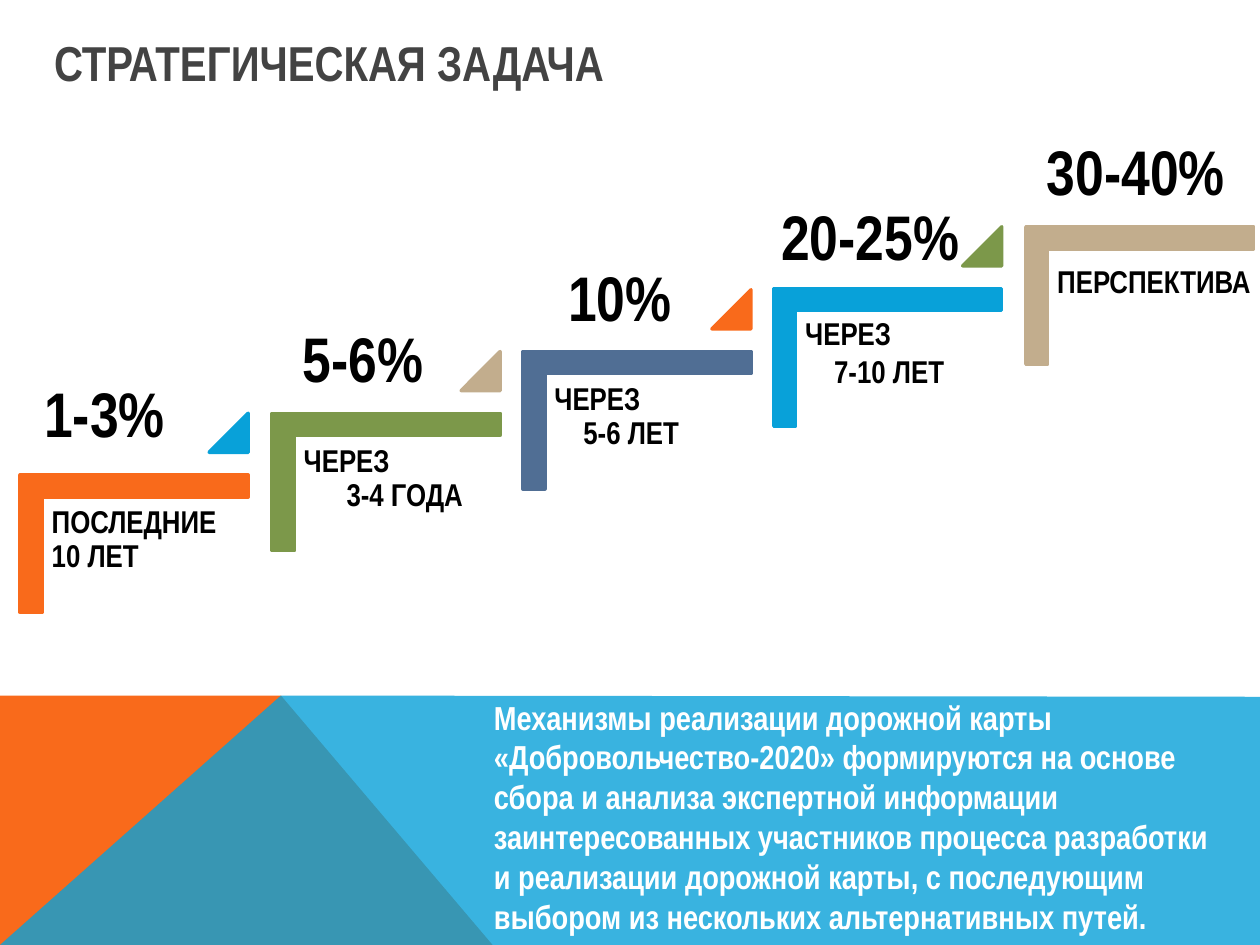
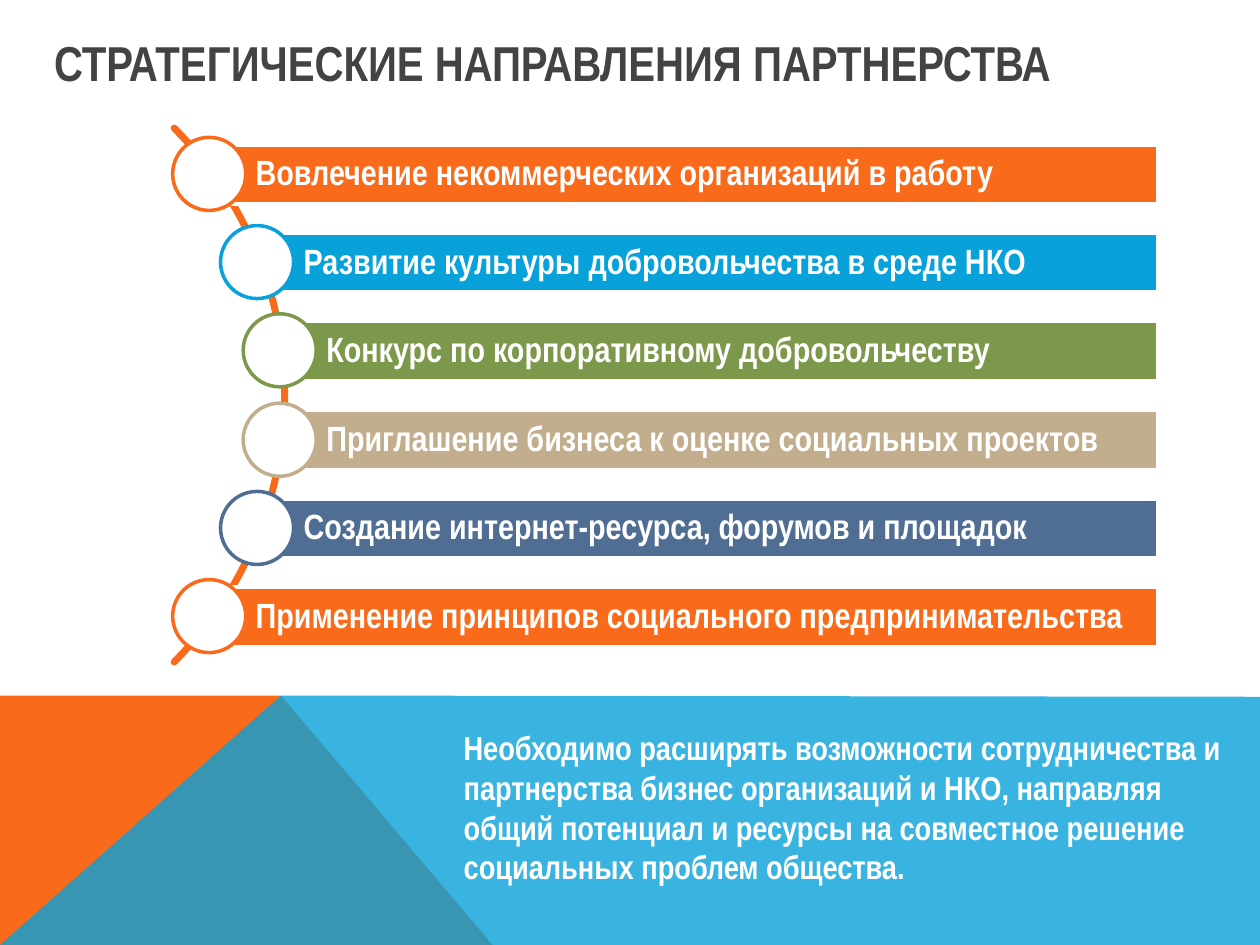
"""Build two slides on volunteering strategy: growth steps and partnership directions."""
from lxml.etree import SubElement
from pptx import Presentation
from pptx.dml.color import RGBColor
from pptx.enum.shapes import MSO_SHAPE
from pptx.enum.text import MSO_ANCHOR, MSO_AUTO_SIZE, PP_ALIGN
from pptx.oxml.ns import qn
from pptx.util import Pt

PX = 9144
FONT = "Arial Narrow"
ORANGE = RGBColor(0xF9, 0x6A, 0x1B)
BLUE = RGBColor(0x08, 0xA1, 0xD9)
GREEN = RGBColor(0x7C, 0x98, 0x4A)
SAND = RGBColor(0xC2, 0xAD, 0x8D)
SLATE = RGBColor(0x50, 0x6E, 0x94)
GRAY = RGBColor(0x43, 0x43, 0x43)
BLACK = RGBColor(0, 0, 0)
WHITE = RGBColor(0xFF, 0xFF, 0xFF)

TITLE_BOX = (33, 21, 924, 57)
BANDS = [
    (ORANGE, 100, [(0, 750), (0, 552), (223, 552), (391, 750)]),
    (BLUE, 80, [(0, 750), (223, 552), (1000, 553), (1000, 750)]),
]

GOAL = {
    "title": "СТРАТЕГИЧЕСКАЯ ЗАДАЧА",
    "statement": "Механизмы реализации дорожной карты «Добровольчество-2020» формируются "
                 "на основе сбора и анализа экспертной информации заинтересованных участников "
                 "процесса разработки и реализации дорожной карты, с последующим выбором "
                 "из нескольких альтернативных путей.",
    "box": (382, 548, 606, 202),
}
STEPS = [
    {"color": ORANGE, "marker": BLUE, "share": "1-3%", "share_box": (20, 292, 126, 71),
     "lines": ["ПОСЛЕДНИЕ", "10 ЛЕТ"], "indent": 0, "drop": 54, "spacing": 0.9},
    {"color": GREEN, "marker": SAND, "share": "5-6%", "share_box": (217, 249, 142, 71),
     "lines": ["ЧЕРЕЗ", "3-4 ГОДА"], "indent": 34, "drop": 54, "spacing": 0.9},
    {"color": SLATE, "marker": ORANGE, "share": "10%", "share_box": (429, 200, 126, 71),
     "lines": ["ЧЕРЕЗ", "5-6 ЛЕТ"], "indent": 23, "drop": 54, "spacing": 0.9},
    {"color": BLUE, "marker": GREEN, "share": "20-25%", "share_box": (608, 152, 165, 71),
     "lines": ["ЧЕРЕЗ", "7-10 ЛЕТ"], "indent": 23, "drop": 49, "spacing": 1.0},
    {"color": SAND, "marker": None, "share": "30-40%", "share_box": (815, 100, 173, 71),
     "lines": ["ПЕРСПЕКТИВА"], "indent": 0, "drop": 57, "spacing": 1.0},
]

PARTNERSHIP = {
    "title": "СТРАТЕГИЧЕСКИЕ НАПРАВЛЕНИЯ ПАРТНЕРСТВА",
    "statement": "Необходимо расширять возможности сотрудничества и партнерства бизнес "
                 "организаций и НКО, направляя общий потенциал и ресурсы на совместное "
                 "решение социальных проблем общества.",
    "box": (358, 572, 626, 138),
}
DIRECTIONS = [
    (166, ORANGE, "Вовлечение некоммерческих организаций в работу"),
    (204, BLUE, "Развитие культуры добровольчества в среде НКО"),
    (222, GREEN, "Конкурс по корпоративному добровольчеству"),
    (222, SAND, "Приглашение бизнеса к оценке социальных проектов"),
    (204, SLATE, "Создание интернет-ресурса, форумов и площадок"),
    (166, ORANGE, "Применение принципов социального предпринимательства"),
]


def apply(target, formats):
    for name, value in formats.items():
        setattr(target, name, value)


def emu(*lengths):
    return [length * PX for length in lengths]


def place(shape, box):
    apply(shape, dict(zip(("left", "top", "width", "height"), emu(*box))))


def write(shape, lines, size, color, align=PP_ALIGN.LEFT, anchor=MSO_ANCHOR.TOP,
          insets=(10, 5, 10, 5), spacing=1.0, indent=0):
    """Fill a shape with bold lines; every line after the first is indented."""
    frame = shape.text_frame
    margins = ("margin_left", "margin_top", "margin_right", "margin_bottom")
    apply(frame, {"word_wrap": True, "auto_size": MSO_AUTO_SIZE.NONE, "vertical_anchor": anchor,
                  **dict(zip(margins, emu(*insets)))})
    for number, line in enumerate(lines):
        para = frame.add_paragraph() if number else frame.paragraphs[0]
        apply(para, {"alignment": align, "line_spacing": spacing,
                     "space_before": Pt(0), "space_after": Pt(0)})
        properties = para._p.get_or_add_pPr()
        properties.set("marL", str(indent * PX if number else 0))
        properties.set("indent", "0")
        SubElement(properties, qn("a:buNone"))
        span = para.add_run()
        span.text = line
        apply(span.font, {"name": FONT, "size": Pt(size), "bold": True})
        span.font.color.rgb = color


def draw(page, kind, box, fill, line, weight=2):
    shape = page.shapes.add_shape(kind, *emu(*box))
    shape.shadow.inherit = False
    if fill is None:
        shape.fill.background()
    else:
        shape.fill.solid()
        shape.fill.fore_color.rgb = fill
    shape.line.color.rgb = line
    shape.line.width = Pt(weight)
    return shape


def add_text(page, box, lines, size, color, **formats):
    write(page.shapes.add_textbox(*emu(*box)), lines, size, color, **formats)


def dress_layout(deck, layout):
    """Put the title position and the bottom bands on the layout."""
    place(layout.placeholders[0], TITLE_BOX)
    page = deck.slides[0]
    for position, (color, opacity, points) in enumerate(BANDS, start=2):
        builder = page.shapes.build_freeform(*points[0], scale=PX)
        builder.add_line_segments(points[1:], close=True)
        band = builder.convert_to_shape()
        band.shadow.inherit = False
        band.fill.solid()
        band.fill.fore_color.rgb = color
        band.line.fill.background()
        tint = band.element.spPr.find(qn("a:solidFill"))[0]
        SubElement(tint, qn("a:alpha")).set("val", str(opacity * 1000))
        layout.shapes.element.insert(position, band.element)


def add_page(deck, layout, content):
    page = deck.slides.add_slide(layout)
    write(page.shapes.title, [content["title"]], 28, GRAY)
    body = page.placeholders[1]
    place(body, content["box"])
    write(body, [content["statement"]], 19, WHITE)
    return page


def draw_steps(page):
    for number, step in enumerate(STEPS):
        left, top = 52 + round(199.5 * number), 341 - round(49.25 * number)
        corner = draw(page, MSO_SHAPE.CORNER, (left, top, 109, 181), step["color"], step["color"])
        corner.rotation = 90
        corner.adjustments[0] = corner.adjustments[1] = 0.16
        if step["marker"]:
            marker = draw(page, MSO_SHAPE.ISOSCELES_TRIANGLE, (left + 114, top - 13, 31, 31),
                          step["marker"], step["marker"])
            marker.adjustments[0] = 1
        add_text(page, (left - 18, top + step["drop"], 168, 71), step["lines"], 18, BLACK,
                 insets=(7, 7, 0, 7), spacing=step["spacing"], indent=step["indent"])
        add_text(page, step["share_box"], [step["share"]], 36, BLACK, align=PP_ALIGN.CENTER)


def draw_directions(page):
    arc = draw(page, MSO_SHAPE.BLOCK_ARC, (-373, 14, 599, 599), None, ORANGE, weight=4)
    for number, value in enumerate((189, 27, 0)):
        arc.adjustments[number] = value
    for number, (left, color, text) in enumerate(DIRECTIONS):
        top = 115 + round(70.2 * number)
        bar = draw(page, MSO_SHAPE.RECTANGLE, (left, top, 919 - left, 47), color, WHITE)
        write(bar, [text], 20, WHITE, anchor=MSO_ANCHOR.MIDDLE, insets=(37, 6, 6, 6), spacing=0.9)
        draw(page, MSO_SHAPE.OVAL, (left - 29, top - 6, 58, 58), WHITE, color)


def main():
    deck = Presentation()
    deck.slide_width, deck.slide_height = emu(1000, 750)
    layout = deck.slide_layouts[1]
    goal_page = add_page(deck, layout, GOAL)
    partnership_page = add_page(deck, layout, PARTNERSHIP)
    dress_layout(deck, layout)
    draw_steps(goal_page)
    draw_directions(partnership_page)
    deck.save("out.pptx")


if __name__ == "__main__":
    main()
